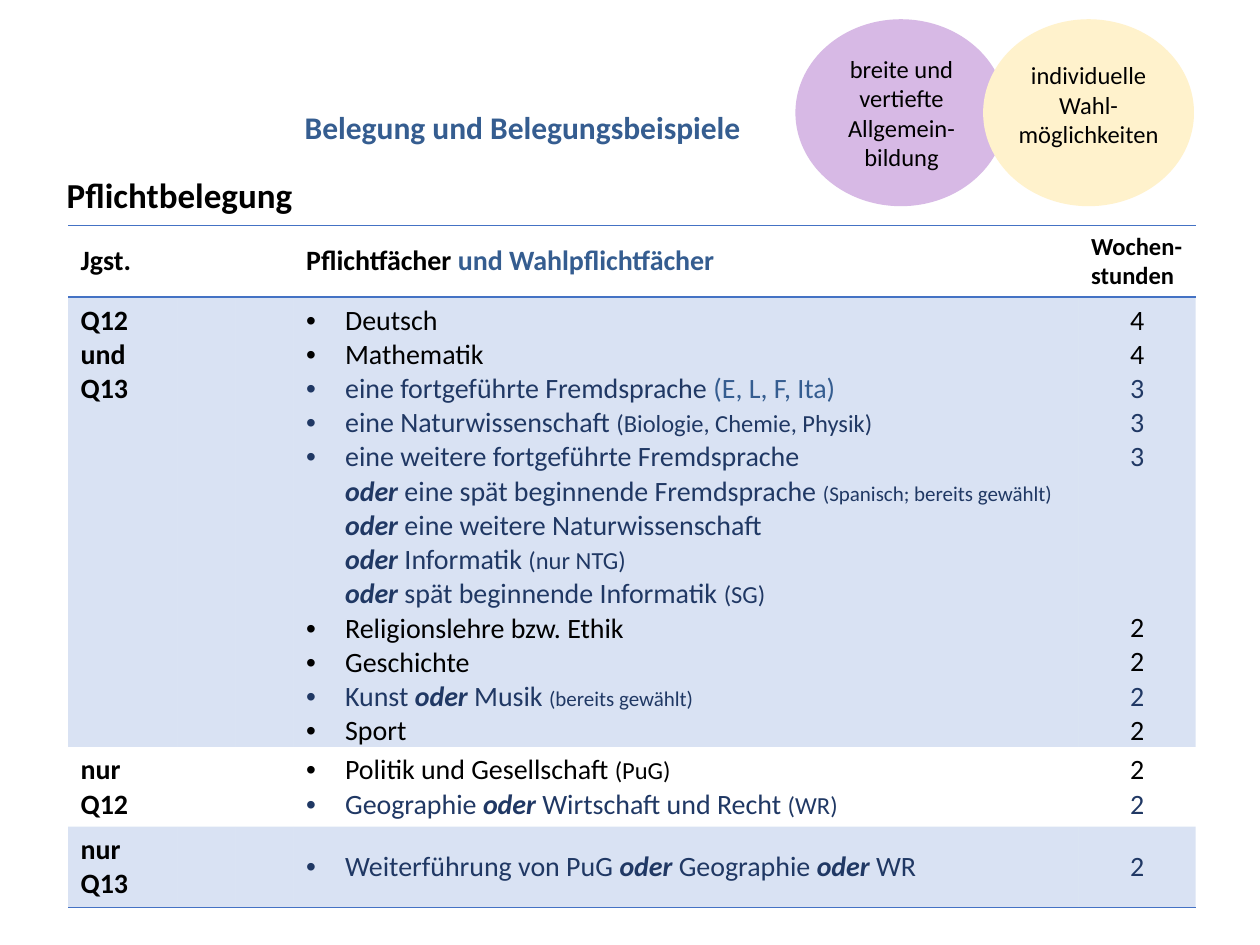
from lxml import etree
from pptx import Presentation
from pptx.dml.color import RGBColor
from pptx.enum.shapes import MSO_SHAPE
from pptx.enum.text import MSO_ANCHOR, PP_ALIGN
from pptx.oxml.ns import qn
from pptx.util import Inches, Pt

ELLIPSE = MSO_SHAPE.OVAL
TOP, MIDDLE = MSO_ANCHOR.TOP, MSO_ANCHOR.MIDDLE
LEFT, CENTER = PP_ALIGN.LEFT, PP_ALIGN.CENTER

FONT = "Calibri"
BLACK = RGBColor(0x00, 0x00, 0x00)
BLUE = RGBColor(0x35, 0x5D, 0x90)
NAVY = RGBColor(0x20, 0x38, 0x64)
ACCENT = RGBColor(0x44, 0x72, 0xC4)
LILAC = RGBColor(0xD7, 0xB9, 0xE5)
CREAM = RGBColor(0xFF, 0xF2, 0xCC)
NO_STYLE = "{2D5ABB26-0587-4C30-8999-92F81FD0307C}"

COLUMN_WIDTHS = (0.87, 0.46, 0.46, 6.23, 0.93)
ROW_HEIGHTS = (0.56, 3.57, 0.63, 0.64)
GAP = 78  # points: four empty lines of 16 pt text

ODER = ("oder", {"bold": True, "italic": True})


def small(text, size=14):
    return text, {"size": size}


# Each subject: colour, its runs, weekly hours, points of space above the hours
SUBJECTS_BOTH = [
    (BLACK, ["Deutsch"], "4", 0),
    (BLACK, ["Mathematik"], "4", 0),
    (NAVY, ["eine fortgeführte Fremdsprache ",
            ("(E, L, F, Ita)", {"color": BLUE})], "3", 0),
    (NAVY, ["eine Naturwissenschaft ", small("(Biologie, Chemie, Physik)")], "3", 0),
    (NAVY, ["eine weitere fortgeführte Fremdsprache\n",
            ODER, " eine spät beginnende Fremdsprache ",
            small("(Spanisch; bereits gewählt)\n", 12),
            ODER, " eine weitere Naturwissenschaft\n",
            ODER, " Informatik ", small("(nur NTG)\n"),
            ODER, " spät beginnende Informatik ", small("(SG)")], "3", 0),
    (BLACK, ["Religionslehre bzw. Ethik"], "2", GAP),
    (BLACK, ["Geschichte"], "2", 0),
    (NAVY, ["Kunst ", ODER, " Musik ", small("(bereits gewählt)", 12)], "2", 0),
    (BLACK, ["Sport"], "2", 0),
]
SUBJECTS_Q12 = [
    (BLACK, ["Politik und Gesellschaft ", small("(PuG)")], "2", 0),
    (NAVY, ["Geographie ", ODER, " Wirtschaft und Recht ", small("(WR)")], "2", 0),
]
SUBJECTS_Q13 = [
    (NAVY, ["Weiterführung von PuG ", ODER, " Geographie ", ODER, " WR"], "2", 0),
]
YEARS = [
    (["Q12", "und", "Q13"], SUBJECTS_BOTH, TOP),
    (["nur Q12"], SUBJECTS_Q12, TOP),
    (["nur Q13"], SUBJECTS_Q13, MIDDLE),
]


def add_run(p, text, size, color, bold, italic):
    r = p.add_run()
    r.text = text
    r.font.name = FONT
    r.font.size = Pt(size)
    r.font.color.rgb = color
    r.font.bold = bold
    r.font.italic = italic


def write(tf, runs, size=16, color=BLACK, bold=False, italic=False,
          align=LEFT, bullet=False, before=0):
    """Add one paragraph; a run is a text or a (text, format) pair."""
    p = tf.paragraphs[0]
    if p.runs:
        p = tf.add_paragraph()
    p.alignment = align
    if before:
        p.space_before = Pt(before)
    if bullet:
        pPr = p._p.get_or_add_pPr()
        pPr.set("marL", str(Inches(0.31)))
        pPr.set("indent", str(-Inches(0.31)))
        etree.SubElement(pPr, qn("a:buFont")).set("typeface", "Arial")
        etree.SubElement(pPr, qn("a:buChar")).set("char", "•")
    base = {"size": size, "color": color, "bold": bold, "italic": italic}
    for run in runs:
        text, changes = (run, {}) if isinstance(run, str) else run
        add_run(p, text.rstrip("\n"), **{**base, **changes})
        if text.endswith("\n"):
            p.add_line_break()


def add_text(s, left, top, width, height, lines, **fmt):
    tf = s.shapes.add_textbox(Inches(left), Inches(top),
                              Inches(width), Inches(height)).text_frame
    tf.word_wrap = True
    for line in lines:
        write(tf, [line], **fmt)


def add_ellipse(s, left, color):
    sp = s.shapes.add_shape(ELLIPSE, Inches(left), Inches(0.16),
                            Inches(1.66), Inches(1.47))
    sp.shadow.inherit = False
    sp.fill.solid()
    sp.fill.fore_color.rgb = color
    sp.line.color.rgb = color
    sp.line.width = Pt(1)


def add_border(cell, tag):
    ln = etree.SubElement(cell._tc.get_or_add_tcPr(), qn(tag), w=str(Pt(1)))
    fill = etree.SubElement(ln, qn("a:solidFill"))
    etree.SubElement(fill, qn("a:srgbClr")).set("val", str(ACCENT))


def shade(cell):
    """Fill the cell with the accent colour at 20 % opacity."""
    cell.fill.solid()
    cell.fill.fore_color.rgb = ACCENT
    color = cell._tc.tcPr.find(".//" + qn("a:solidFill") + "[last()]/" + qn("a:srgbClr"))
    for color in cell._tc.tcPr.findall(qn("a:solidFill") + "/" + qn("a:srgbClr")):
        etree.SubElement(color, qn("a:alpha")).set("val", "20000")


def style_cells(table):
    last = len(ROW_HEIGHTS) - 1
    for i, row in enumerate(table.rows):
        for cell in row.cells:
            if i == 0:
                add_border(cell, "a:lnT")
            if i in (0, last):
                add_border(cell, "a:lnB")
            if i % 2:
                shade(cell)
            else:
                cell.fill.background()


def fill_header(table):
    year, subjects, hours = (table.cell(0, c) for c in (0, 3, 4))
    year.vertical_anchor = subjects.vertical_anchor = MIDDLE
    write(year.text_frame, ["Jgst."], bold=True)
    write(subjects.text_frame,
          ["Pflichtfächer ", ("und Wahlpflichtfächer", {"color": BLUE})], bold=True)
    write(hours.text_frame, ["Wochen-stunden"], size=14, bold=True)


def fill_year(table, row, names, subjects, anchor):
    year, subject_cell, hours_cell = (table.cell(row, c) for c in (0, 3, 4))
    for name in names:
        write(year.text_frame, [name], bold=True)
    subject_cell.vertical_anchor = anchor
    hours_cell.vertical_anchor = MIDDLE
    for color, runs, hours, before in subjects:
        write(subject_cell.text_frame, runs, color=color, bullet=True)
        write(hours_cell.text_frame, [hours], color=color, align=CENTER, before=before)


def add_subject_table(s):
    table = s.shapes.add_table(len(ROW_HEIGHTS), len(COLUMN_WIDTHS), Inches(0.54),
                               Inches(1.79), Inches(8.95), Inches(5.4)).table
    table.first_row = table.horz_banding = False
    table._tbl.tblPr.find(qn("a:tableStyleId")).text = NO_STYLE
    for column, width in zip(table.columns, COLUMN_WIDTHS):
        column.width = Inches(width)
    for row, height in zip(table.rows, ROW_HEIGHTS):
        row.height = Inches(height)
    style_cells(table)
    fill_header(table)
    for row, (names, subjects, anchor) in enumerate(YEARS, start=1):
        fill_year(table, row, names, subjects, anchor)
    for cell in table.rows[1].cells:
        cell.margin_bottom = 0


def main():
    prs = Presentation()
    prs.slide_width, prs.slide_height = Inches(10), Inches(7.5)
    s = prs.slides.add_slide(prs.slide_layouts[6])
    add_text(s, 2.32, 0.81, 9.37, 0.87, ["Belegung und Belegungsbeispiele"],
             size=18, color=BLUE, bold=True)
    add_text(s, 0.43, 1.33, 9.05, 0.44, ["Pflichtbelegung"], size=20, bold=True)
    add_subject_table(s)
    add_ellipse(s, 6.32, LILAC)
    add_text(s, 6.5, 0.38, 1.31, 1.04, ["breite und vertiefte Allgemein-bildung"],
             size=14, align=CENTER)
    add_ellipse(s, 7.81, CREAM)
    add_text(s, 7.93, 0.43, 1.42, 0.81, ["individuelle", "Wahl-", "möglichkeiten"],
             size=14, align=CENTER)
    prs.save("out.pptx")


if __name__ == "__main__":
    main()
